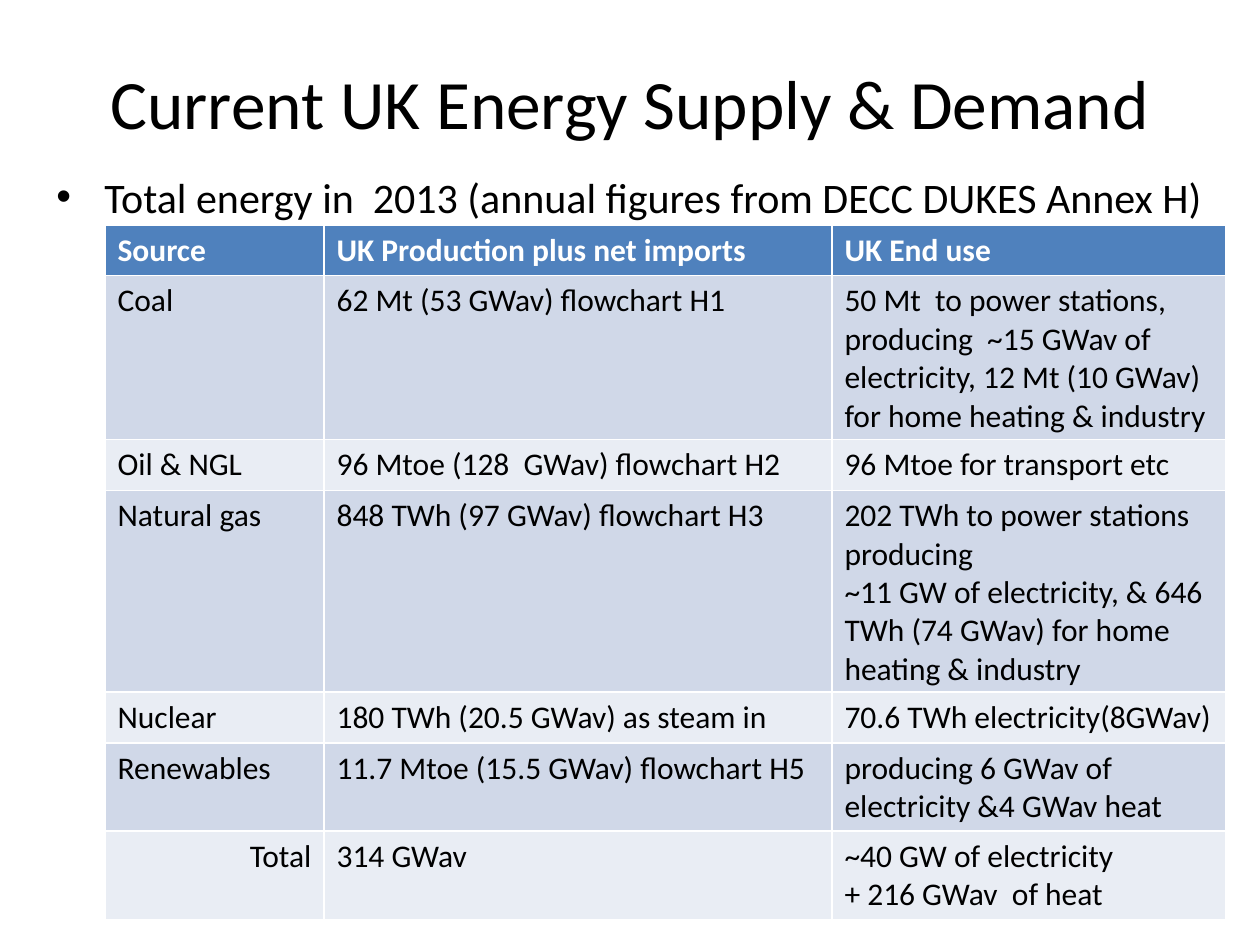
"""Build a slide with a table of UK energy supply and demand by source."""
from lxml.etree import SubElement
from pptx import Presentation
from pptx.dml.color import RGBColor
from pptx.enum.text import MSO_ANCHOR, PP_ALIGN
from pptx.oxml.ns import qn
from pptx.util import Pt

PX = 914400 / 126
BLACK = RGBColor(0x00, 0x00, 0x00)
WHITE = RGBColor(0xFF, 0xFF, 0xFF)
HEADER_BLUE = RGBColor(0x4F, 0x81, 0xBD)
BAND_DARK = RGBColor(0xD0, 0xD8, 0xE8)
BAND_LIGHT = RGBColor(0xE9, 0xED, 0xF4)

COLUMN_WIDTHS = [219, 508, 394]
ROW_HEIGHTS = [49, 51, 51, 51, 51, 51, 51]
ROWS = [
    ("Source", "UK Production plus net imports", "UK End use"),
    ("Coal", "62 Mt (53 GWav) flowchart H1",
     "50 Mt  to power stations, producing  ~15 GWav of electricity, "
     "12 Mt (10 GWav) for home heating & industry"),
    ("Oil & NGL", "96 Mtoe (128  GWav) flowchart H2", "96 Mtoe for transport etc"),
    ("Natural gas", "848 TWh (97 GWav) flowchart H3",
     "202 TWh to power stations producing\n"
     "~11 GW of electricity, & 646 TWh (74 GWav) for home heating & industry"),
    ("Nuclear", "180 TWh (20.5 GWav) as steam in", "70.6 TWh electricity(8GWav)"),
    ("Renewables", "11.7 Mtoe (15.5 GWav) flowchart H5",
     "producing 6 GWav of electricity &4 GWav heat"),
    ("Total", "314 GWav", "~40 GW of electricity\n+ 216 GWav  of heat"),
]


def px(*lengths):
    return [round(length * PX) for length in lengths]


def style(paragraph, size, color, bold=False):
    font = paragraph.font
    font.name, font.size, font.bold = "Calibri", Pt(size), bold
    font.color.rgb = color


presentation = Presentation()
presentation.slide_width, presentation.slide_height = px(1260, 945)
slide = presentation.slides.add_slide(presentation.slide_layouts[6])

title = slide.shapes.add_textbox(*px(63, 38, 1134, 127)).text_frame
title.word_wrap = True
title.vertical_anchor = MSO_ANCHOR.MIDDLE
title.text = "Current UK Energy Supply & Demand"
title.paragraphs[0].alignment = PP_ALIGN.CENTER
style(title.paragraphs[0], 39.6, BLACK)

body = slide.shapes.add_textbox(*px(44, 165, 1201, 595)).text_frame
body.word_wrap = True
body.text = "Total energy in  2013 (annual figures from DECC DUKES Annex H)"
bullet_paragraph = body.paragraphs[0]
bullet_paragraph.space_before = Pt(4.8)
style(bullet_paragraph, 24, BLACK)
indent = px(48)[0]
properties = bullet_paragraph._p.get_or_add_pPr()
properties.set("marL", str(indent))
properties.set("indent", str(-indent))
bullet_font = SubElement(properties, qn("a:buFont"))
bullet_font.set("typeface", "Arial")
bullet = SubElement(properties, qn("a:buChar"))
bullet.set("char", "•")
properties.append(properties.find(qn("a:defRPr")))

frame = slide.shapes.add_table(
    len(ROWS), len(COLUMN_WIDTHS),
    *px(105, 225, sum(COLUMN_WIDTHS), sum(ROW_HEIGHTS)))
table = frame.table
for column, width in zip(table.columns, px(*COLUMN_WIDTHS)):
    column.width = width
for row, height in zip(table.rows, px(*ROW_HEIGHTS)):
    row.height = height

for row_index, texts in enumerate(ROWS):
    is_header = row_index == 0
    band = BAND_DARK if row_index % 2 else BAND_LIGHT
    for column_index, text in enumerate(texts):
        cell = table.cell(row_index, column_index)
        cell.fill.solid()
        cell.fill.fore_color.rgb = HEADER_BLUE if is_header else band
        cell.text = text
        for paragraph in cell.text_frame.paragraphs:
            style(paragraph, 18, WHITE if is_header else BLACK, is_header)

total_label = table.cell(len(ROWS) - 1, 0).text_frame.paragraphs[0]
total_label.alignment = PP_ALIGN.RIGHT

presentation.save("out.pptx")
